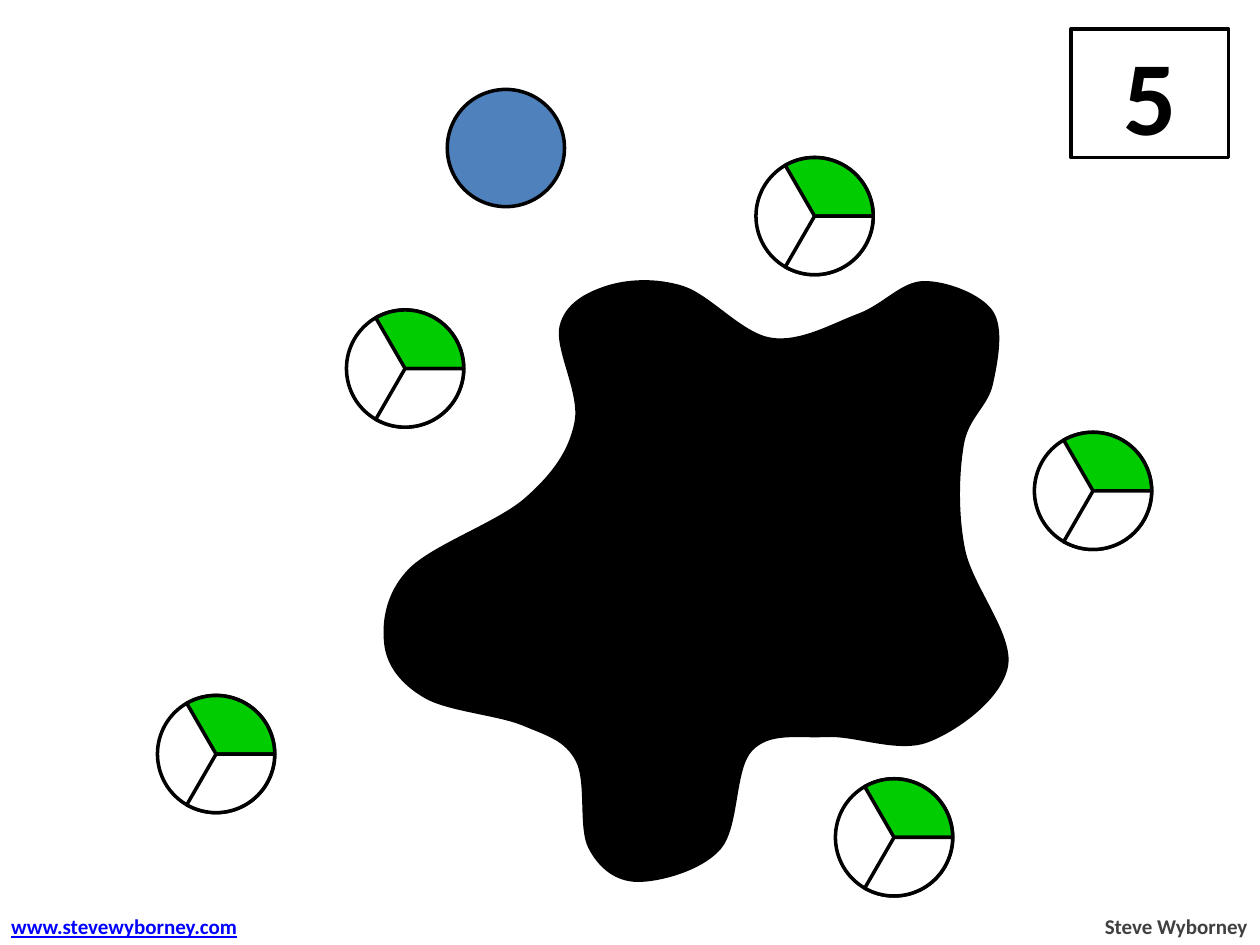
from dataclasses import dataclass

import pptx
import pptx.dml.color
import pptx.enum.shapes
import pptx.enum.text
import pptx.oxml
import pptx.oxml.ns
import pptx.util

Pt = pptx.util.Pt
Shape = pptx.enum.shapes.MSO_SHAPE
Align = pptx.enum.text.PP_ALIGN
Anchor = pptx.enum.text.MSO_ANCHOR
RGB = pptx.dml.color.RGBColor.from_string


@dataclass(frozen=True)
class Theme:
    black: str = "000000"
    white: str = "FFFFFF"
    blue: str = "4F81BD"
    green: str = "00CC00"
    link: str = "0000FF"
    gray: str = "404040"
    font: str = "Calibri"
    number_size: int = 60
    footer_size: int = 12
    outline: int = 2


theme = Theme()


def add_preset(shapes, preset, left, top, width, height, fill):
    """Add a filled preset shape with the common black outline."""
    shape = shapes.add_shape(preset, Pt(left), Pt(top), Pt(width), Pt(height))
    shape.shadow.inherit = False
    shape.fill.solid()
    shape.fill.fore_color.rgb = RGB(fill)
    shape.line.color.rgb = RGB(theme.black)
    shape.line.width = Pt(theme.outline)
    return shape


def write_text(shape, text, size, color, align, underline=False, wrap=True):
    frame = shape.text_frame
    frame.word_wrap = wrap
    paragraph = frame.paragraphs[0]
    paragraph.alignment = align
    run = paragraph.add_run()
    run.text = text
    run.font.name = theme.font
    run.font.size = Pt(size)
    run.font.bold = True
    run.font.underline = underline
    run.font.color.rgb = RGB(color)


presentation = pptx.Presentation()
presentation.slide_width = Pt(720)
presentation.slide_height = Pt(540)
slide = presentation.slides.add_slide(presentation.slide_layouts[6])

# Ink blot: a smooth closed curve through these points
blot_points = [
    (242.6, 398.9), (219.6, 368.6), (233.3, 325.4), (300.2, 284.4),
    (328.3, 241.2), (319.7, 186.5), (346.3, 163.4), (390.2, 163.4),
    (440.6, 193), (490.3, 179.3), (527.8, 160.6), (567.4, 177.8),
    (567.4, 219.6), (550.8, 254.2), (551.5, 313.9), (576, 380.9),
    (530.6, 424.1), (472.3, 421.2), (429.8, 429.1), (411.8, 485.3),
    (364.3, 504), (336.2, 484.6), (329, 434.9), (298.8, 414.7),
]
anchors = [(Pt(x), Pt(y)) for x, y in blot_points]
builder = slide.shapes.build_freeform(*anchors[0])
builder.add_line_segments(anchors[1:], close=True)
blot = builder.convert_to_shape()
blot.shadow.inherit = False
blot.fill.solid()
blot.fill.fore_color.rgb = RGB(theme.black)
blot.line.fill.background()

# Each control point lies a sixth of the neighbours' distance from its anchor
outline = blot._element.spPr.find(".//" + pptx.oxml.ns.qn("a:path"))
for segment in outline.findall(pptx.oxml.ns.qn("a:lnTo")):
    outline.remove(segment)
count = len(anchors)
for index in range(count):
    before, start, end, after = (anchors[(index + step) % count] for step in (-1, 0, 1, 2))
    leaving = [s + (e - b) / 6 for b, s, e in zip(before, start, end)]
    arriving = [e - (a - s) / 6 for s, e, a in zip(start, end, after)]
    points = "".join(
        f'<a:pt x="{round(x - blot.left)}" y="{round(y - blot.top)}"/>'
        for x, y in (leaving, arriving, end)
    )
    curve = pptx.oxml.parse_xml(
        f'<a:cubicBezTo {pptx.oxml.ns.nsdecls("a")}>{points}</a:cubicBezTo>'
    )
    outline.insert(index + 1, curve)

# Number card
card = add_preset(slide.shapes, Shape.RECTANGLE, 612, 16.5, 90, 73.5, theme.white)
card.text_frame.vertical_anchor = Anchor.MIDDLE
write_text(card, "5", size=theme.number_size, color=theme.black, align=Align.CENTER)

# Footer
footers = [
    ("Steve Wyborney", 623.5, 96.5, theme.gray, Align.RIGHT, False),
    ("www.stevewyborney.com", -0.7, 147.6, theme.link, Align.LEFT, True),
]
for text, left, width, color, align, underline in footers:
    box = slide.shapes.add_textbox(Pt(left), Pt(518.4), Pt(width), Pt(21.6))
    write_text(box, text, size=theme.footer_size, color=color, align=align,
               underline=underline, wrap=False)

# Whole circle
diameter = 67
add_preset(slide.shapes, Shape.OVAL, 255.6, 51.1, diameter, diameter, theme.blue)

# Circles in thirds, with one third shaded
third_circles = [(90, 397.4), (477.4, 445), (198, 177.1), (591.1, 247), (432, 90)]
for left, top in third_circles:
    group = slide.shapes.add_group_shape()
    add_preset(group.shapes, Shape.OVAL, left, top, diameter, diameter, theme.white)
    for rotation, fill in ((240, theme.green), (0, theme.white)):
        # PIE is the single-wedge chart shape; its angles are set in 60000ths of a degree
        third = add_preset(group.shapes, Shape.PIE, left, top, diameter, diameter, fill)
        third.adjustments[0] = 0
        third.adjustments[1] = 120 * 60000 / 100000
        third.rotation = rotation

presentation.save("out.pptx")
